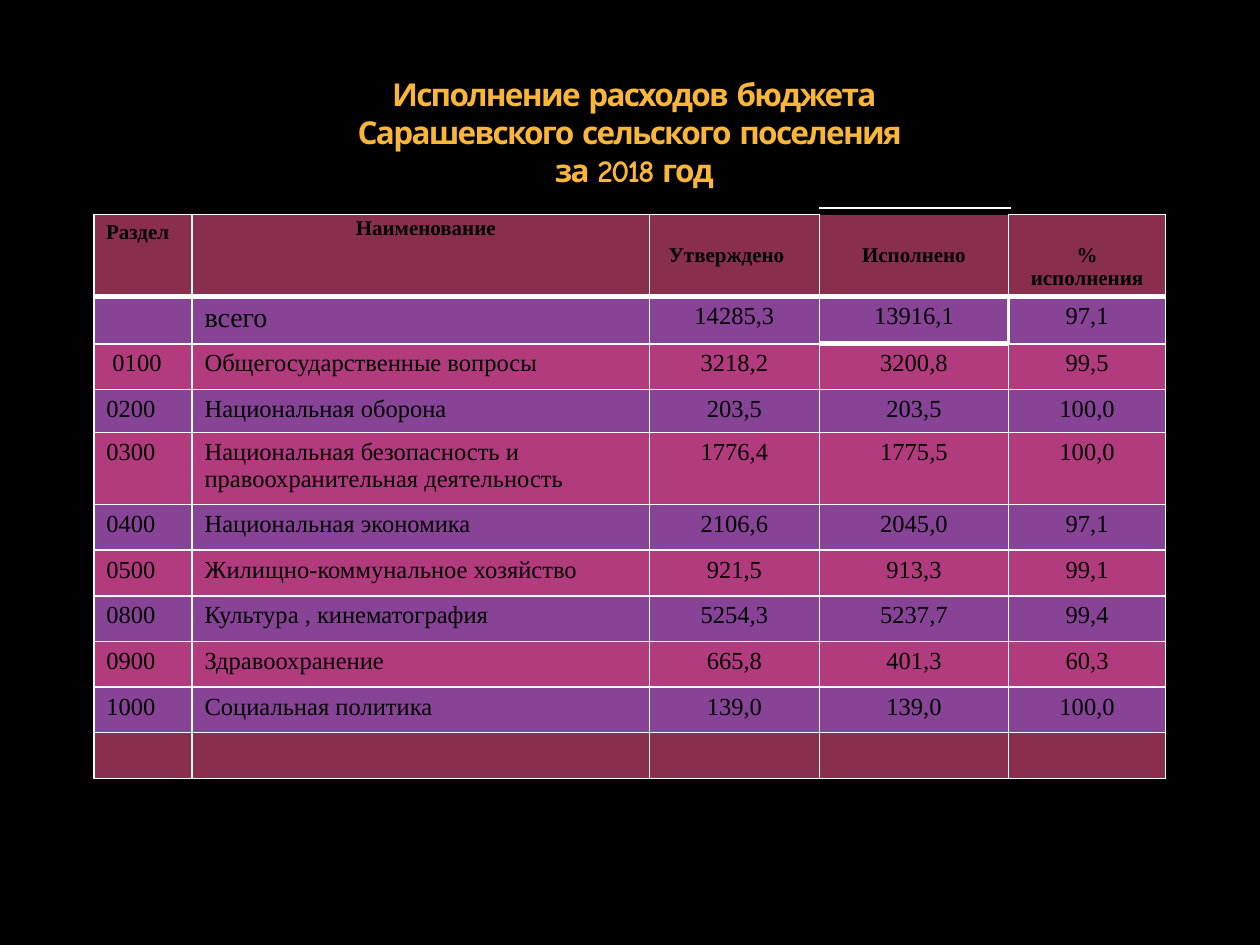
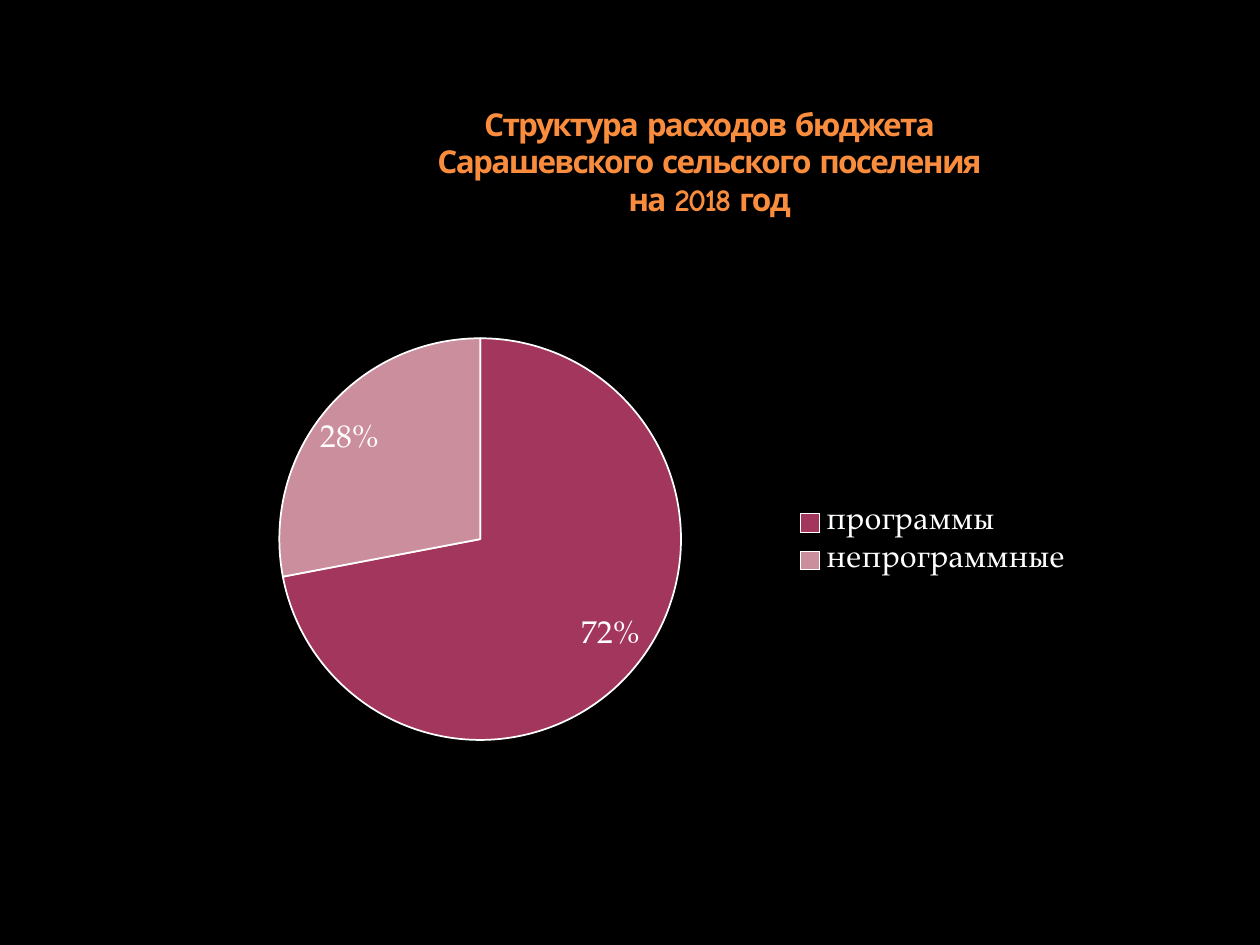
"""Build two slides on the 2018 budget spending of a rural settlement."""
from dataclasses import dataclass

from lxml import etree
from pptx import Presentation
from pptx import util as u
from pptx.chart import data as cd
from pptx.dml import color as col
from pptx.enum import chart as ch, text as tx
from pptx.oxml import ns, parse_xml

HUE = {
    "back": "000000", "ink": "000000", "white": "FFFFFF",
    "gold": "F9B639", "orange": "FA8D3D",
    "head": "8A2E4E", "plum": "874396", "rose": "B23B7E",
    "pie": "A2365C", "pale": "CB8E9C",
}
SERIF, COMIC, BOOK = "Times New Roman", "Comic Neue", "TeX Gyre Pagella"
MID, LEFT = tx.PP_ALIGN.CENTER, tx.PP_ALIGN.LEFT

WIDTHS = (1.98, 9.22, 3.43, 3.81, 3.17)
HEIGHTS = (1.66, 0.95, 0.92, 0.87, 1.45) + (0.92,) * 6
ROWS = (
    ("", "всего", "14285,3", "13916,1", "97,1"),
    (" 0100", "Общегосударственные вопросы", "3218,2", "3200,8", "99,5"),
    ("0200", "Национальная оборона", "203,5", "203,5", "100,0"),
    ("0300", "Национальная безопасность и правоохранительная деятельность",
     "1776,4", "1775,5", "100,0"),
    ("0400", "Национальная экономика", "2106,6", "2045,0", "97,1"),
    ("0500", "Жилищно-коммунальное хозяйство", "921,5", "913,3", "99,1"),
    ("0800", "Культура , кинематография", "5254,3", "5237,7", "99,4"),
    ("0900", "Здравоохранение", "665,8", "401,3", "60,3"),
    ("1000", "Социальная политика", "139,0", "139,0", "100,0"),
    ("",) * 5,
)
THIN = {side: ("white", 1) for side in "LRTB"}
EDGES = {
    (0, 3): {"T": ("back", 1)},
    (1, 3): {"R": ("white", 2.25), "B": ("white", 3)},
    (1, 4): {"L": ("white", 2.25)},
    (2, 3): {"T": ("white", 3)},
}


@dataclass
class Title:
    """Heading text with its box in centimetres."""
    text: str
    hue: str
    left: float
    top: float
    width: float
    height: float


@dataclass
class Head:
    """Column heading with its alignment and cell margins in centimetres."""
    text: str
    align: int = MID
    top: float = 0.59
    left: float = 0.25
    right: float = 0.25


HEADS = (
    Head("Раздел", align=LEFT, top=0.13),
    Head("Наименование", top=0.05, left=0.46),
    Head("Утверждено", right=0.57),
    Head("Исполнено"),
    Head("% исполнения"),
)
SPEND = Title("Исполнение расходов бюджета\nСарашевского сельского поселения \n"
              "за 2018 год", "gold", 0.89, 2.53, 23.8, 1.4)
SHARE = Title(" Структура расходов бюджета\n Сарашевского сельского поселения\n"
              " на 2018 год", "orange", 3.91, 1.12, 20.6, 3.4)


def rgb(name: str) -> col.RGBColor:
    """Look up a colour by name."""
    return col.RGBColor.from_string(HUE[name])


def write(frame, words: str, *, size: float, hue: str = "ink", font: str = SERIF,
          bold: bool = False, align=LEFT, track: int = 0) -> None:
    """Put formatted text into a text frame."""
    frame.word_wrap = True
    para = frame.paragraphs[0]
    para.text = words
    para.alignment = align
    for run in para.runs:
        run.font.size, run.font.name, run.font.bold = u.Pt(size), font, bold
        run.font.color.rgb = rgb(hue)
        if track:
            run.font._element.set("spc", str(track))


def start(deck, title: Title):
    """Add a dark slide with its title."""
    slide = deck.slides.add_slide(deck.slide_layouts[6])
    slide.background.fill.solid()
    slide.background.fill.fore_color.rgb = rgb("back")
    box = slide.shapes.add_textbox(u.Cm(title.left), u.Cm(title.top),
                                   u.Cm(title.width), u.Cm(title.height))
    box.text_frame.vertical_anchor = tx.MSO_ANCHOR.BOTTOM
    write(box.text_frame, title.text, size=18, hue=title.hue, font=COMIC,
          bold=True, align=MID, track=-100)
    return slide


def rule(cell, edges: dict) -> None:
    """Draw the given borders of a cell and clear the others."""
    prop = cell._tc.get_or_add_tcPr()
    for side in "LRTB":
        line = etree.SubElement(prop, ns.qn(f"a:ln{side}"))
        if side not in edges:
            etree.SubElement(line, ns.qn("a:noFill"))
            continue
        hue, wide = edges[side]
        line.set("w", str(u.Pt(wide)))
        fill = etree.SubElement(line, ns.qn("a:solidFill"))
        etree.SubElement(fill, ns.qn("a:srgbClr"), val=HUE[hue])


def shade(row: int) -> str:
    """Name the fill of a table row."""
    if row in (0, len(ROWS)):
        return "head"
    return "plum" if row % 2 else "rose"


def fill_cell(cell, row: int, num: int) -> None:
    """Format one cell and write its text."""
    edges = dict(THIN)
    if row < 2:
        edges["T" if row else "B"] = ("white", 3)
    rule(cell, edges | EDGES.get((row, num), {}))
    cell.fill.solid()
    cell.fill.fore_color.rgb = rgb(shade(row))
    if row == 0:
        head = HEADS[num]
        cell.margin_top, cell.margin_bottom = u.Cm(head.top), 0
        cell.margin_left, cell.margin_right = u.Cm(head.left), u.Cm(head.right)
        write(cell.text_frame, head.text, size=12, bold=True, align=head.align)
    elif words := ROWS[row - 1][num]:
        write(cell.text_frame, words, size=16 if (row, num) == (1, 1) else 14,
              align=MID if num > 1 else LEFT)
    else:
        cell.margin_top = cell.margin_bottom = 0


def lay(slide, left: float, top: float, wides: tuple, highs: tuple):
    """Add a table with the given column widths and row heights."""
    grid = slide.shapes.add_table(
        len(highs), len(wides), u.Cm(left), u.Cm(top),
        u.Cm(sum(wides)), u.Cm(sum(highs))).table
    for part, wide in zip(grid.columns, wides):
        part.width = u.Cm(wide)
    for part, high in zip(grid.rows, highs):
        part.height = u.Cm(high)
    return grid


def add_grid(slide) -> None:
    """Add the spending table and the underlined cell above it."""
    grid = lay(slide, 1.89, 4.32, WIDTHS, HEIGHTS)
    for row, part in enumerate(grid.rows):
        for num, cell in enumerate(part.cells):
            fill_cell(cell, row, num)
    cell = lay(slide, 16.51, 3.33, (3.88,), (0.86,)).cell(0, 0)
    cell.margin_top = cell.margin_bottom = 0
    rule(cell, {"B": ("white", 1.5)})
    cell.fill.background()


def place(chart, **box: float) -> None:
    """Fix the inner plot area as fractions of the chart."""
    area = chart.element.find(".//" + ns.qn("c:plotArea"))
    for old in area.findall(ns.qn("c:layout")):
        area.remove(old)
    modes = '<c:layoutTarget val="inner"/><c:xMode val="edge"/><c:yMode val="edge"/>'
    sizes = "".join(f'<c:{key} val="{val}"/>' for key, val in box.items())
    area.insert(0, parse_xml(
        f'<c:layout {ns.nsdecls("c")}><c:manualLayout>{modes}{sizes}'
        '</c:manualLayout></c:layout>'))


def add_pie(slide) -> None:
    """Add the pie of programme and other spending."""
    data = cd.CategoryChartData(number_format="0%")
    data.categories = ("программы", "непрограммные")
    data.add_series("Series 1", (0.72, 0.28))
    chart = slide.shapes.add_chart(ch.XL_CHART_TYPE.PIE, u.Cm(3.1), u.Cm(5.92),
                                   u.Cm(18.8), u.Cm(10), data).chart
    chart.has_title = False
    chart.font.size, chart.font.name = u.Pt(18), BOOK
    chart.font.color.rgb = rgb("white")
    chart.has_legend = True
    chart.legend.position = ch.XL_LEGEND_POSITION.RIGHT
    chart.legend.include_in_layout = False
    plot = chart.plots[0]
    plot.vary_by_categories = True
    series = plot.series[0]
    tags = series.data_labels
    tags.show_value, tags.show_percentage = True, False
    tags.number_format, tags.number_format_is_linked = "0%", False
    tags.position = ch.XL_LABEL_POSITION.BEST_FIT
    tags.font.size, tags.font.name = u.Pt(18), BOOK
    tags.font.color.rgb = rgb("white")
    for num, hue in enumerate(("pie", "pale")):
        form = series.points[num].format
        form.fill.solid()
        form.fill.fore_color.rgb = rgb(hue)
        form.line.color.rgb, form.line.width = rgb("white"), u.Pt(1)
    place(chart, x=0.12, y=0.09, w=0.46, h=0.81)


def main() -> None:
    """Build and save the deck."""
    deck = Presentation()
    deck.slide_width, deck.slide_height = u.Cm(25.4), u.Cm(19.05)
    add_grid(start(deck, SPEND))
    add_pie(start(deck, SHARE))
    deck.save("out.pptx")


if __name__ == "__main__":
    main()
